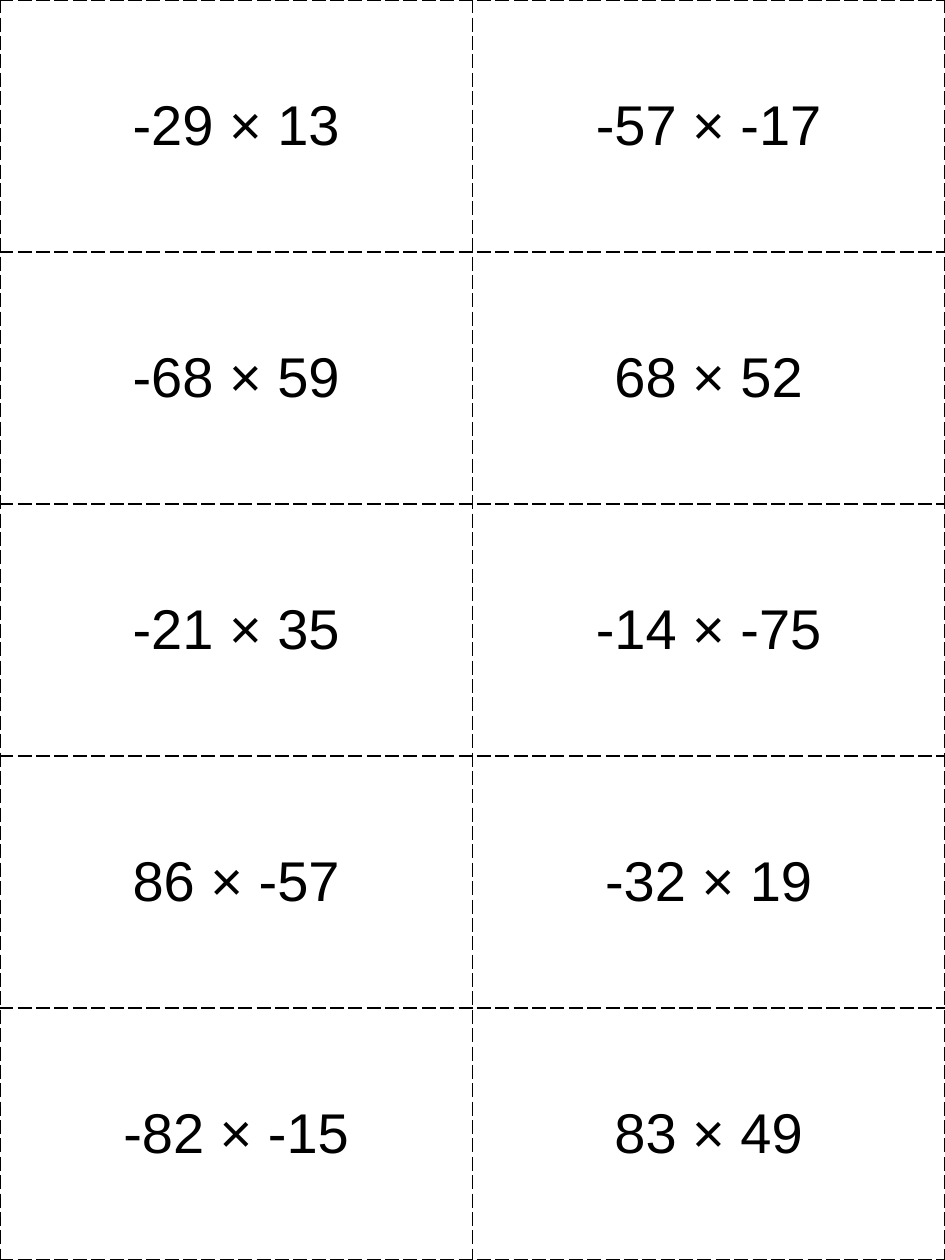
from lxml.etree import SubElement
from pptx import Presentation
from pptx.dml.color import RGBColor
from pptx.enum.text import MSO_ANCHOR as Anchor, PP_ALIGN as Align
from pptx.oxml.ns import qn
from pptx.util import Cm, Pt

BLACK = "000000"
WHITE = "FFFFFF"


def color(hex_string):
    return RGBColor.from_string(hex_string)


def write_text(cell, text, size=32, font="Arial", hex_color=BLACK, align=Align.CENTER):
    paragraph = cell.text_frame.paragraphs[0]
    paragraph.alignment = align
    run = paragraph.add_run()
    run.text = text
    run.font.size = Pt(size)
    run.font.name = font
    run.font.color.rgb = color(hex_color)


problems = [
    ("-29 × 13", "-57 × -17"),
    ("-68 × 59", "68 × 52"),
    ("-21 × 35", "-14 × -75"),
    ("86 × -57", "-32 × 19"),
    ("-82 × -15", "83 × 49"),
]

presentation = Presentation()
presentation.slide_width = width = Cm(19.05)
presentation.slide_height = height = Cm(25.4)
slide = presentation.slides.add_slide(presentation.slide_layouts[6])

row_count, column_count = len(problems), len(problems[0])
table = slide.shapes.add_table(row_count, column_count, 0, 0, width, height).table
table.first_row = False
table.horz_banding = False
for column in table.columns:
    column.width = width // column_count
for row in table.rows:
    row.height = height // row_count

for row, row_problems in zip(table.rows, problems):
    for cell, problem in zip(row.cells, row_problems):
        cell.vertical_anchor = Anchor.MIDDLE
        cell.margin_left = cell.margin_right = Cm(0.25)
        cell.margin_top = cell.margin_bottom = Cm(0.13)
        write_text(cell, problem)

        # Borders come before the fill in the cell properties
        properties = cell._tc.get_or_add_tcPr()
        for side in ("lnL", "lnR", "lnT", "lnB"):
            border = SubElement(properties, qn(f"a:{side}"), w=str(Pt(1)))
            line_fill = SubElement(border, qn("a:solidFill"))
            SubElement(line_fill, qn("a:srgbClr"), val=BLACK)
            SubElement(border, qn("a:prstDash"), val="lgDash")
        white_fill = SubElement(properties, qn("a:solidFill"))
        SubElement(white_fill, qn("a:srgbClr"), val=WHITE)

presentation.save("out.pptx")
